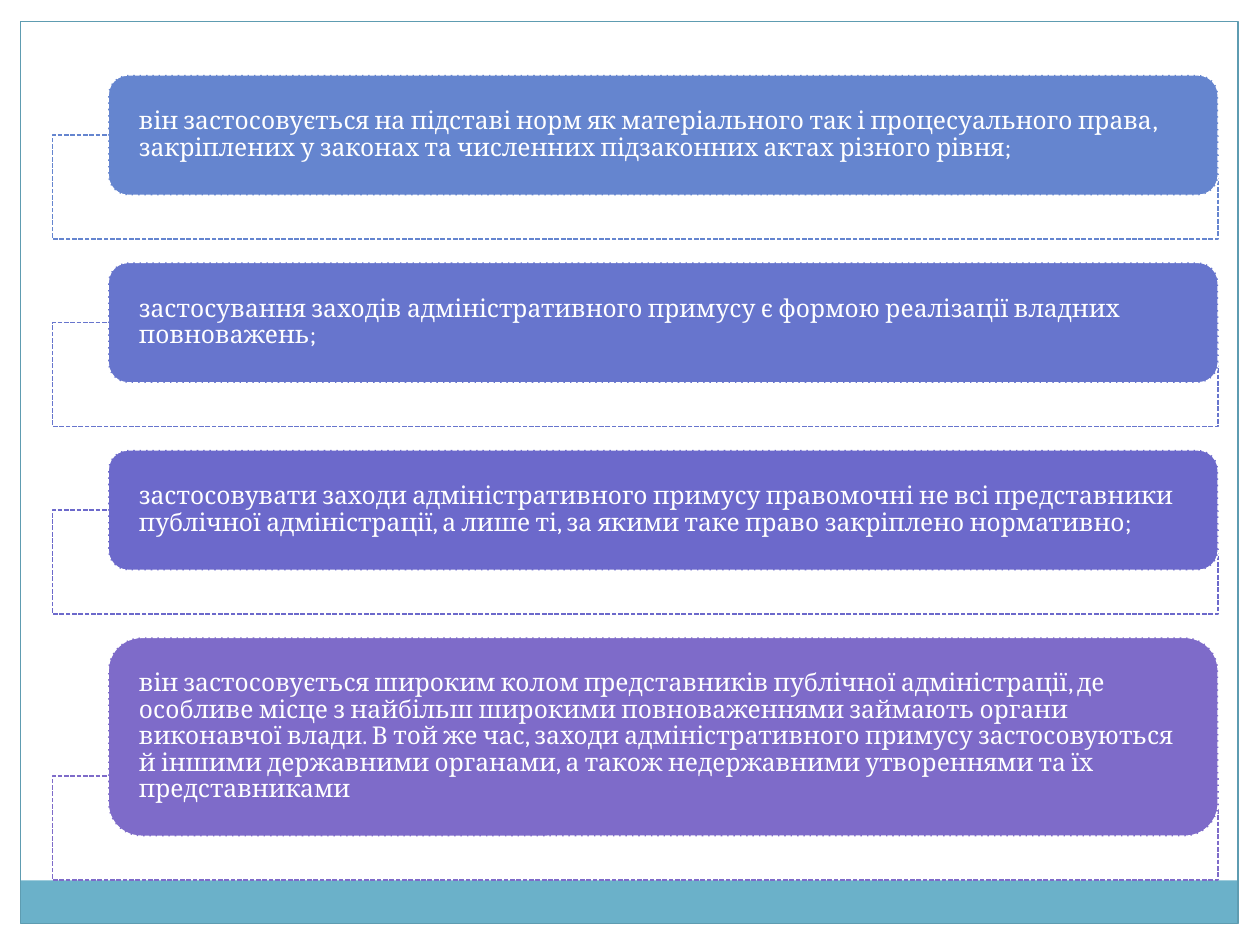
from dataclasses import dataclass

from lxml.etree import SubElement
from pptx import Presentation
from pptx.dml.color import RGBColor as RGB
from pptx.enum.dml import MSO_LINE as Dash
from pptx.enum.shapes import MSO_SHAPE as Shape
from pptx.enum.text import MSO_ANCHOR as Anchor, PP_ALIGN as Align
from pptx.oxml.ns import qn
from pptx.util import Cm, Pt


@dataclass(frozen=True)
class Theme:
    font: str = "Cambria"
    size: float = 14
    white: str = "FFFFFF"
    bar: str = "6BB1C9"
    frame: str = "5E9CB1"
    items: tuple = ("6585CF", "6775CD", "6C69CB", "7E6BC9")
    frame_line: float = 0.75
    item_line: float = 0.9


THEME = Theme()

# Label text and label height in cm
ITEMS = (
    ("він застосовується на підставі норм як матеріального так і процесуального права, "
     "закріплених у законах та численних підзаконних актах різного рівня;", 2.43),
    ("застосування заходів адміністративного примусу є формою реалізації владних "
     "повноважень;", 2.43),
    ("застосовувати заходи адміністративного примусу правомочні не всі представники "
     "публічної адміністрації, а лише ті, за якими таке право закріплено нормативно;", 2.43),
    ("він застосовується широким колом представників публічної адміністрації, де "
     "особливе місце з найбільш широкими повноваженнями займають органи виконавчої влади. "
     "В той же час, заходи адміністративного примусу застосовуються й іншими державними "
     "органами, а також недержавними утвореннями та їх представниками", 4.01),
)


def add_box(slide, kind, box, fill=None, line=None, width=0, dash=None):
    """Add a flat shape; box is left, top, width, height in cm."""
    sp = slide.shapes.add_shape(kind, *map(Cm, box))
    sp.shadow.inherit = False
    if fill:
        sp.fill.solid()
        sp.fill.fore_color.rgb = RGB.from_string(fill)
    else:
        sp.fill.background()
    if line:
        sp.line.color.rgb = RGB.from_string(line)
        sp.line.width = Pt(width)
        if dash:
            sp.line.dash_style = dash
    else:
        sp.line.fill.background()
    return sp


def set_opacity(sp, percent):
    color = sp.fill._xPr.find(qn("a:solidFill"))[0]
    SubElement(color, qn("a:alpha")).set("val", str(percent * 1000))


def add_frame(slide, box):
    left, top, width, height = box
    bar_height = 0.87
    add_box(slide, Shape.RECTANGLE,
            (left, top + height - bar_height, width, bar_height), THEME.bar)
    add_box(slide, Shape.RECTANGLE, box, line=THEME.frame, width=THEME.frame_line)


def write_label(sp, text, height):
    corner_inset = height / 6 * 0.29  # the rounded corner already insets the text
    tf = sp.text_frame
    tf.word_wrap = True
    tf.vertical_anchor = Anchor.MIDDLE
    tf.margin_left = tf.margin_right = Cm(0.62 - corner_inset)
    tf.margin_top = tf.margin_bottom = 0
    p = tf.paragraphs[0]
    p.text = text
    p.alignment = Align.LEFT
    p.line_spacing = 0.9
    p.font.name = THEME.font
    p.font.size = Pt(THEME.size)
    p.font.color.rgb = RGB.from_string(THEME.white)


def add_item(slide, box, text, color):
    """Add a dashed outline at the foot of the box and a label above it."""
    left, top, width, height = box
    outline_height, indent, drop = 2.1, 1.12, 0.88
    outline = add_box(slide, Shape.RECTANGLE,
                      (left, top + height - outline_height, width, outline_height),
                      THEME.white, color, THEME.item_line, Dash.SQUARE_DOT)
    set_opacity(outline, 90)
    outline.line.dash_style = Dash.SQUARE_DOT
    label_height = height - drop
    label = add_box(slide, Shape.ROUNDED_RECTANGLE,
                    (left + indent, top, width - indent, label_height),
                    color, THEME.white, THEME.item_line, Dash.SQUARE_DOT)
    write_label(label, text, label_height)


def add_list(slide, left, top, width):
    drop, gap = 0.88, 0.47
    for (text, label_height), color in zip(ITEMS, THEME.items):
        height = label_height + drop
        add_item(slide, (left, top, width, height), text, color)
        top += height + gap


def main():
    prs = Presentation()
    prs.slide_width, prs.slide_height = Cm(25.4), Cm(19.05)
    slide = prs.slides.add_slide(prs.slide_layouts[6])
    add_frame(slide, (0.42, 0.43, 24.54, 18.19))
    add_list(slide, 1.06, 1.51, 23.5)
    prs.save("out.pptx")


if __name__ == "__main__":
    main()
